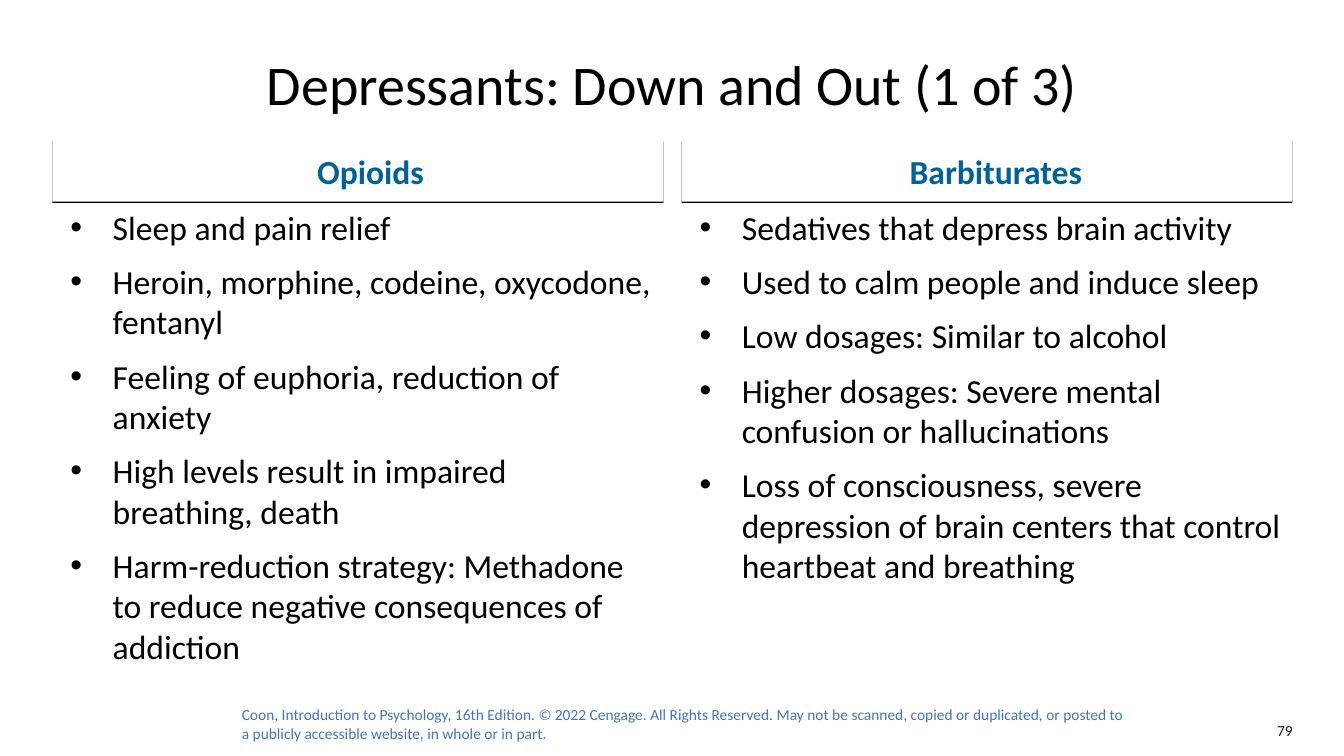
import pptx
import pptx.util
import pptx.dml.color
import pptx.enum.shapes
import pptx.enum.text
import pptx.oxml
import pptx.oxml.ns
from pptx.util import Inches

# Content
TITLE = "Depressants: Down and Out (1 of 3)"
COLUMNS = [
    ("Opioids", [
        "Sleep and pain relief",
        "Heroin, morphine, codeine, oxycodone, fentanyl",
        "Feeling of euphoria, reduction of anxiety",
        "High levels result in impaired breathing, death",
        "Harm-reduction strategy: Methadone to reduce negative consequences of addiction",
    ]),
    ("Barbiturates ", [
        "Sedatives that depress brain activity",
        "Used to calm people and induce sleep",
        "Low dosages: Similar to alcohol",
        "Higher dosages: Severe mental confusion or hallucinations",
        "Loss of consciousness, severe depression of brain centers that control "
        "heartbeat and breathing",
    ]),
]
COPYRIGHT = (
    "Coon, Introduction to Psychology, 16th Edition. © 2022 Cengage. All Rights Reserved. "
    "May not be scanned, copied or duplicated, or posted to a publicly accessible website, "
    "in whole or in part."
)
PAGE_NUMBER = "79"

# Layout, in inches
LEFT, COLUMN_WIDTH, COLUMN_STEP = 0.52, 6.06, 6.24
HEADING_TOP, HEADING_HEIGHT = 1.39, 0.61
LIST_TOP, LIST_HEIGHT = HEADING_TOP + HEADING_HEIGHT, 4.05

ALIGN = pptx.enum.text.PP_ALIGN
ANCHOR = pptx.enum.text.MSO_ANCHOR
A_NS = pptx.oxml.ns.nsdecls("a")


def color(hex_value):
    return pptx.dml.color.RGBColor.from_string(hex_value)


def fill_text(shape, lines, size, hex_value, align=ALIGN.LEFT, anchor=ANCHOR.TOP,
              bold=False, inset=0.05, indent=None, bullet=None, line_spacing=None):
    frame = shape.text_frame
    frame.word_wrap = True
    frame.vertical_anchor = anchor
    frame.margin_left = frame.margin_right = Inches(0.1)
    frame.margin_top = frame.margin_bottom = Inches(inset)
    frame.text = "\n".join(lines)
    for index, paragraph in enumerate(frame.paragraphs):
        paragraph.alignment = align
        if line_spacing:
            paragraph.line_spacing = line_spacing
        if index:
            paragraph.space_before = pptx.util.Pt(10)
        properties = paragraph._p.get_or_add_pPr()
        if indent:
            margin, first_line = indent
            properties.set("marL", str(Inches(margin)))
            properties.set("indent", str(Inches(first_line)))
        if bullet:
            properties.append(pptx.oxml.parse_xml(f'<a:buFont {A_NS} typeface="Arial"/>'))
            properties.append(pptx.oxml.parse_xml(f'<a:buChar {A_NS} char="{bullet}"/>'))
        for run in paragraph.runs:
            run.font.name = "Calibri"
            run.font.size = pptx.util.Pt(size)
            run.font.bold = bold
            run.font.color.rgb = color(hex_value)


def add_underline_shadow(shape):
    shape.shadow.inherit = False
    effects = shape._element.spPr.find(pptx.oxml.ns.qn("a:effectLst"))
    effects.append(pptx.oxml.parse_xml(
        f'<a:outerShdw {A_NS} blurRad="0" dist="{pptx.util.Pt(1)}" dir="5400000" '
        'algn="t" rotWithShape="0"><a:srgbClr val="000000"/></a:outerShdw>'))


deck = pptx.Presentation()
deck.slide_width, deck.slide_height = Inches(13.33), Inches(7.5)
slide = deck.slides.add_slide(deck.slide_layouts[6])


def add_text(left, top, width, height, lines, size, hex_value, **style):
    box = slide.shapes.add_textbox(*map(Inches, (left, top, width, height)))
    fill_text(box, lines, size, hex_value, **style)


# Footer
add_text(12.12, 7.05, 0.8, 0.4, [PAGE_NUMBER], 11, "181717",
         align=ALIGN.RIGHT, anchor=ANCHOR.MIDDLE)
add_text(2.3, 6.95, 9.06, 0.5, [COPYRIGHT], 11, "4472C4")

# Title
add_text(LEFT, 0.52, 12.29, 0.8, [TITLE], 40, "000000",
         align=ALIGN.CENTER, line_spacing=0.9)

# Columns: heading above a bulleted list
for position, (heading, points) in enumerate(COLUMNS):
    left = LEFT + position * COLUMN_STEP
    heading_bar = slide.shapes.add_shape(
        pptx.enum.shapes.MSO_SHAPE.RECTANGLE,
        *map(Inches, (left, HEADING_TOP, COLUMN_WIDTH, HEADING_HEIGHT)))
    heading_bar.fill.solid()
    heading_bar.fill.fore_color.rgb = color("FFFFFF")
    heading_bar.line.fill.background()
    add_underline_shadow(heading_bar)
    fill_text(heading_bar, [heading], 24, "006298", align=ALIGN.CENTER,
              anchor=ANCHOR.BOTTOM, bold=True, inset=0.1, indent=(0.5, -0.25))
    add_text(left, LIST_TOP, COLUMN_WIDTH, LIST_HEIGHT, points, 24, "000000",
             indent=(0.5, -0.42), bullet="•")

deck.save("out.pptx")
